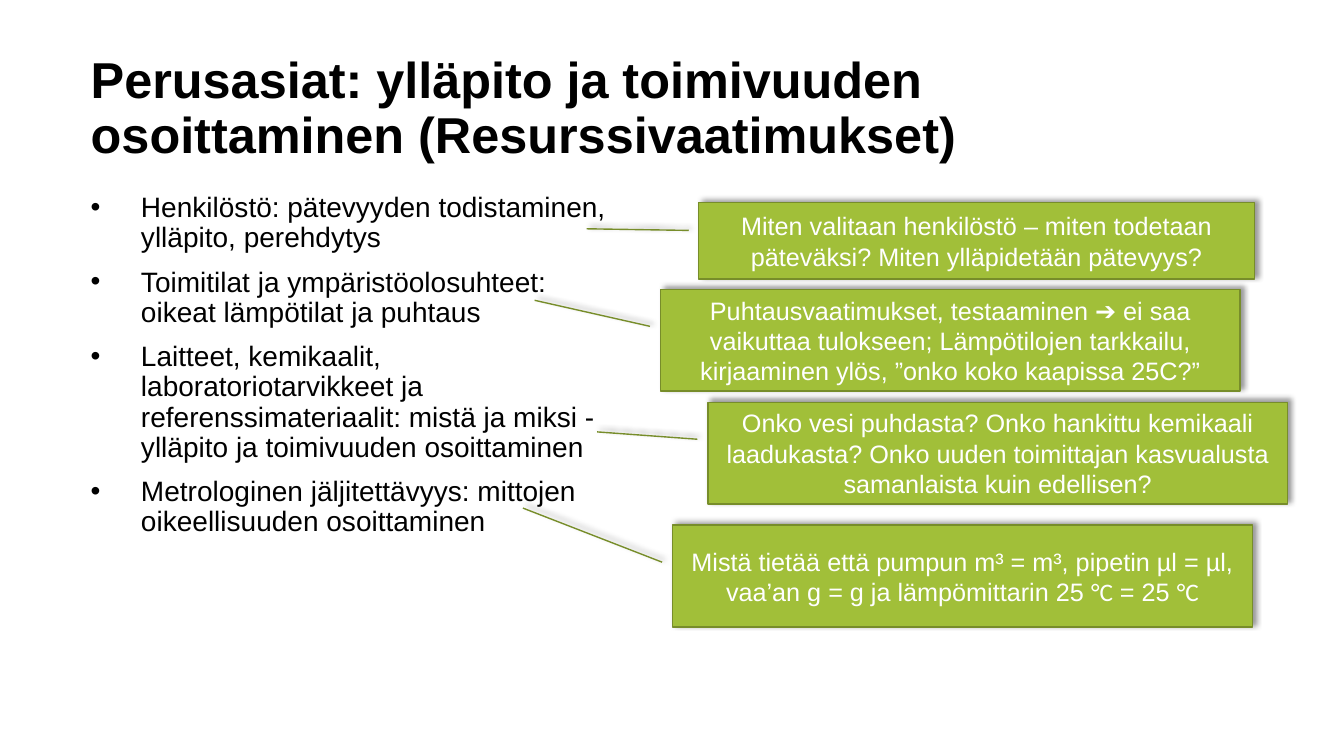
from dataclasses import dataclass

from lxml.etree import SubElement
from pptx import Presentation
from pptx.dml.color import RGBColor
from pptx.enum.shapes import MSO_SHAPE
from pptx.enum.text import MSO_ANCHOR, MSO_AUTO_SIZE, PP_ALIGN
from pptx.oxml.ns import qn
from pptx.util import Pt

PX = 9144  # 100 px to the inch


@dataclass(frozen=True)
class Theme:
    font: str = "Arial"
    unit_font: str = "Calibri"
    ink: str = "000000"
    light: str = "FFFFFF"
    green: str = "A1BF39"
    green_edge: str = "778D2A"
    title_size: int = 36
    body_size: int = 20
    callout_size: int = 18


class SlideBuilder:
    def __init__(self, slide, theme):
        self.slide = slide
        self.theme = theme

    def style(self, font, size, color, bold=False):
        font.name = self.theme.font
        font.size = Pt(size)
        font.bold = bold
        font.color.rgb = RGBColor.from_string(color)

    def title(self, text, left, top, width, height):
        title = self.slide.shapes.title
        title.left, title.top, title.width, title.height = (
            v * PX for v in (left, top, width, height))
        frame = title.text_frame
        frame.text = text
        frame.word_wrap = True
        frame.auto_size = MSO_AUTO_SIZE.NONE
        frame.vertical_anchor = MSO_ANCHOR.BOTTOM
        paragraph = frame.paragraphs[0]
        paragraph.alignment = PP_ALIGN.LEFT
        paragraph.line_spacing = 0.9
        self.style(paragraph.font, self.theme.title_size, self.theme.ink, bold=True)

    def bullets(self, items, left, top, width, height, indent=50):
        box = self.slide.shapes.add_textbox(*(v * PX for v in (left, top, width, height)))
        frame = box.text_frame
        frame.word_wrap = True
        frame.text = "\n".join(items)
        for i, paragraph in enumerate(frame.paragraphs):
            paragraph.line_spacing = 0.9
            paragraph.space_before = Pt(10 if i else 0)
            properties = paragraph._p.get_or_add_pPr()
            properties.set("marL", str(indent * PX))
            properties.set("indent", str(-indent * PX))
            SubElement(properties, qn("a:buFont"), typeface="Arial")
            SubElement(properties, qn("a:buChar"), char="•")
            self.style(paragraph.font, self.theme.body_size, self.theme.ink)

    def callout(self, runs, left, top, width, height, pointer):
        """pointer: end of the leader line as (y, x) fractions of the box."""
        theme = self.theme
        box = self.slide.shapes.add_shape(
            MSO_SHAPE.LINE_CALLOUT_1, *(v * PX for v in (left, top, width, height)))
        for i, value in enumerate((0.364, -0.018, *pointer)):
            box.adjustments[i] = value
        box.fill.solid()
        box.fill.fore_color.rgb = RGBColor.from_string(theme.green)
        box.line.color.rgb = RGBColor.from_string(theme.green_edge)
        box.line.width = Pt(1)
        self.soft_shadow(box)

        frame = box.text_frame
        frame.word_wrap = True
        frame.vertical_anchor = MSO_ANCHOR.MIDDLE
        paragraph = frame.paragraphs[0]
        paragraph.alignment = PP_ALIGN.CENTER
        self.style(paragraph.font, theme.callout_size, theme.light)
        for text in runs:
            run = paragraph.add_run()
            run.text = text
            if text == "°C":
                run.font.name = theme.unit_font

    def soft_shadow(self, shape):
        shape.shadow.inherit = False
        effects = shape._element.spPr.find(qn("a:effectLst"))
        shadow = SubElement(effects, qn("a:outerShdw"), blurRad=str(Pt(4)), dist=str(Pt(3)),
                            dir=str(315 * 60000), algn="bl", rotWithShape="0")
        color = SubElement(shadow, qn("a:srgbClr"), val=self.theme.ink)
        SubElement(color, qn("a:alpha"), val="40000")


REQUIREMENTS = [
    "Henkilöstö: pätevyyden todistaminen, ylläpito, perehdytys",
    "Toimitilat ja ympäristöolosuhteet: oikeat lämpötilat ja puhtaus",
    "Laitteet, kemikaalit, laboratoriotarvikkeet ja referenssimateriaalit: "
    "mistä ja miksi - ylläpito ja toimivuuden osoittaminen",
    "Metrologinen jäljitettävyys: mittojen oikeellisuuden osoittaminen",
]

# Runs, left, top, width, height, pointer end
QUESTIONS = [
    (["Miten valitaan henkilöstö – miten todetaan päteväksi? Miten ylläpidetään pätevyys?"],
     693, 201, 551, 76, (0.343, -0.202)),
    (["Puhtausvaatimukset, testaaminen ➔ ei saa vaikuttaa tulokseen; Lämpötilojen tarkkailu, "
      "kirjaaminen ylös, ”onko koko kaapissa 25C?”"],
     655, 287, 575, 101, (0.108, -0.217)),
    (["Onko vesi puhdasta? Onko hankittu kemikaali laadukasta? "
      "Onko uuden toimittajan kasvualusta samanlaista kuin edellisen?"],
     702, 399, 575, 101, (0.292, -0.191)),
    (["Mistä tietää että pumpun m³ = m³, pipetin µl = µl, vaa’an g = g ja lämpömittarin 25 ",
      "°C", " = 25 ", "°C"],
     667, 521, 575, 101, (-0.168, -0.258)),
]


def main():
    prs = Presentation()
    prs.slide_width, prs.slide_height = 1333 * PX, 750 * PX
    title_only = prs.slide_layouts[5]
    builder = SlideBuilder(prs.slides.add_slide(title_only), Theme())

    # Heading and requirement list
    builder.title("Perusasiat: ylläpito ja toimivuuden osoittaminen (Resurssivaatimukset)",
                  80, 56, 1150, 112)
    builder.bullets(REQUIREMENTS, 80, 187, 551, 466)

    # Questions pointing at each requirement
    for question in QUESTIONS:
        builder.callout(*question)

    prs.save("out.pptx")


if __name__ == "__main__":
    main()
